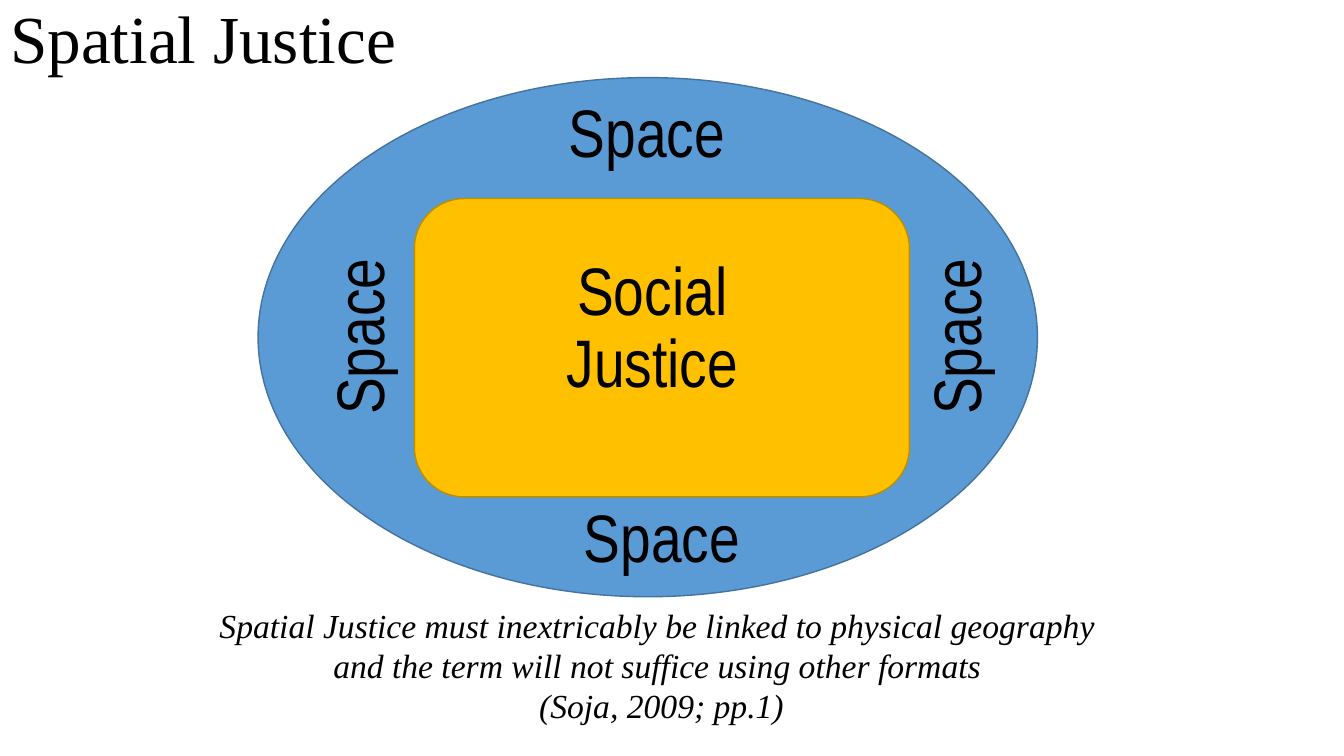
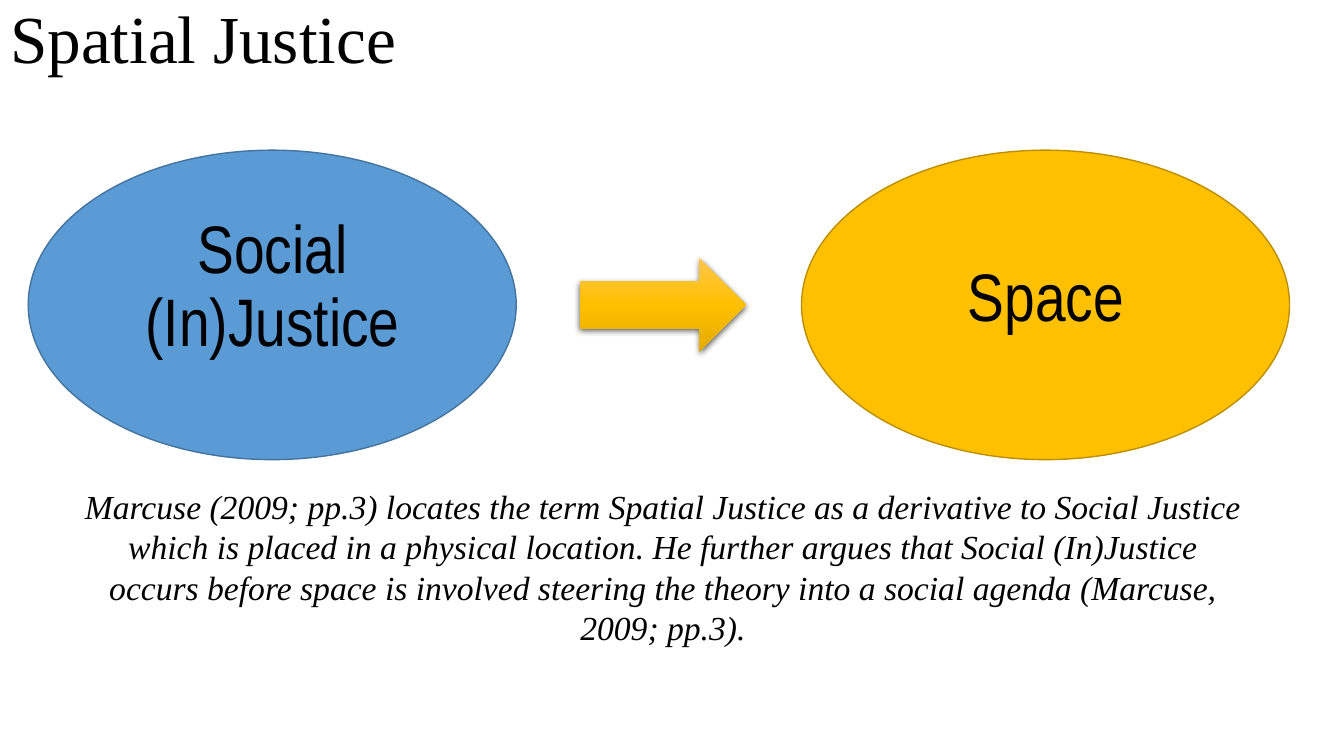
from lxml import etree
from pptx import Presentation
from pptx.dml.color import RGBColor
from pptx.enum.shapes import MSO_SHAPE
from pptx.enum.text import MSO_ANCHOR, MSO_AUTO_SIZE, PP_ALIGN
from pptx.oxml import parse_xml
from pptx.oxml.ns import nsdecls
from pptx.util import Inches, Pt

ELLIPSE, ROUNDED = MSO_SHAPE.OVAL, MSO_SHAPE.ROUNDED_RECTANGLE
ARROW = MSO_SHAPE.RIGHT_ARROW
LEFT, CENTER = PP_ALIGN.LEFT, PP_ALIGN.CENTER
TOP, NO_AUTOFIT = MSO_ANCHOR.TOP, MSO_AUTO_SIZE.NONE

BLACK = RGBColor(0x00, 0x00, 0x00)
BLUE, BLUE_EDGE = RGBColor(0x5B, 0x9B, 0xD5), RGBColor(0x43, 0x73, 0x9E)
GOLD, GOLD_EDGE = RGBColor(0xFF, 0xC0, 0x00), RGBColor(0xBD, 0x8E, 0x00)
GOLD_LIGHT, GOLD_DARK = RGBColor(0xFF, 0xC6, 0x4B), RGBColor(0xE3, 0xAB, 0x00)
SERIF, NARROW = "Times New Roman", "Arial Narrow"

# Content: shapes are (kind, box, fill, edge); labels are (lines, box, rotation)
TITLE = "Spatial Justice"
SLIDES = [
    {
        "shapes": [
            (ELLIPSE, (2.56, 0.77, 7.73, 5.15), BLUE, BLUE_EDGE),
            (ROUNDED, (4.11, 1.97, 4.91, 2.96), GOLD, GOLD_EDGE),
        ],
        "labels": [
            (["Social", "Justice"], (4.19, 2.5, 4.56, 1.68), 0),
            (["Space"], (5.34, 0.94, 2.15, 0.84), 0),
            (["Space"], (5.49, 4.96, 2.15, 0.84), 0),
            (["Space"], (2.53, 2.92, 2.15, 0.84), 270),
            (["Space"], (8.45, 2.92, 2.15, 0.84), 270),
        ],
        "arrow": None,
        "caption": [
            "Spatial Justice must inextricably be linked to physical geography ",
            "and the term will not suffice using other formats ",
            "(Soja, 2009; pp.1)",
        ],
        "caption_box": (2.04, 5.95, 9.04, 1.31),
        "caption_wrap": False,
    },
    {
        "shapes": [
            (ELLIPSE, (0.28, 1.49, 4.84, 3.07), BLUE, BLUE_EDGE),
            (ELLIPSE, (7.95, 1.49, 4.84, 3.07), GOLD, GOLD_EDGE),
        ],
        "labels": [
            (["Social", "(In)Justice"], (0.19, 2.09, 5.03, 1.85), 0),
            (["Space"], (9.19, 2.56, 2.37, 0.93), 0),
        ],
        "arrow": (5.75, 2.56, 1.65, 0.93),
        "caption": [
            "Marcuse (2009; pp.3) locates the term Spatial Justice as a derivative "
            "to Social Justice which is placed in a physical location. He further "
            "argues that Social (In)Justice occurs before space is involved steering "
            "the theory into a social agenda (Marcuse, 2009; pp.3).",
        ],
        "caption_box": (0.71, 4.77, 11.73, 1.72),
        "caption_wrap": True,
    },
]


def inches(box):
    return [Inches(length) for length in box]


def write(shape, lines, font, size, align=CENTER, spacing=0.9, italic=False, wrap=True):
    frame = shape.text_frame
    frame.text = "\n".join(lines)
    frame.word_wrap = wrap
    frame.auto_size = NO_AUTOFIT
    frame.vertical_anchor = TOP
    for para in frame.paragraphs:
        para.alignment = align
        para.line_spacing = spacing
        para.space_before = Pt(0)
        for span in para.runs:
            span.font.name, span.font.size = font, Pt(size)
            span.font.italic = italic
            span.font.color.rgb = BLACK


def add_title(slide):
    title = slide.shapes.title
    title.left, title.top, title.width, title.height = inches((0, 0, 10, 1.1))
    write(title, [TITLE], SERIF, 48, align=LEFT)


def add_filled(slide, kind, box, fill, edge):
    shape = slide.shapes.add_shape(kind, *inches(box))
    shape.shadow.inherit = False
    shape.fill.solid()
    shape.fill.fore_color.rgb = fill
    shape.line.color.rgb = edge
    shape.line.width = Pt(1)


def add_arrow(slide, box):
    arrow = slide.shapes.add_shape(ARROW, *inches(box))
    arrow.line.fill.background()
    arrow.shadow.inherit = False
    # Three-stop gradient, running downwards
    arrow.fill.gradient()
    stops = "".join(
        f'<a:gs pos="{percent * 1000}"><a:srgbClr val="{color}"/></a:gs>'
        for percent, color in [(0, GOLD_LIGHT), (50, GOLD), (100, GOLD_DARK)]
    )
    properties = arrow.element.spPr
    gradient = properties.find("{*}gradFill")
    properties.replace(gradient, parse_xml(
        f'<a:gradFill {nsdecls("a")} rotWithShape="1"><a:gsLst>{stops}</a:gsLst>'
        '<a:lin ang="5400000" scaled="0"/></a:gradFill>'
    ))
    # Soft shadow below
    effects = properties.find("{*}effectLst")
    shadow = etree.SubElement(
        effects, effects.tag.replace("effectLst", "outerShdw"),
        blurRad=str(Pt(4.5)), dist=str(Pt(1.5)), dir="5400000",
        algn="ctr", rotWithShape="0",
    )
    shadow.append(parse_xml(
        f'<a:srgbClr {nsdecls("a")} val="{BLACK}"><a:alpha val="63000"/></a:srgbClr>'
    ))


def build_slide(deck, content):
    slide = deck.slides.add_slide(deck.slide_layouts.get_by_name("Title Only"))
    add_title(slide)
    for kind, box, fill, edge in content["shapes"]:
        add_filled(slide, kind, box, fill, edge)
    for lines, box, rotation in content["labels"]:
        label = slide.shapes.add_textbox(*inches(box))
        label.rotation = rotation
        write(label, lines, NARROW, 48)
    if content["arrow"]:
        add_arrow(slide, content["arrow"])
    caption = slide.shapes.add_textbox(*inches(content["caption_box"]))
    write(caption, content["caption"], SERIF, 24, spacing=1.0, italic=True,
          wrap=content["caption_wrap"])


def main():
    deck = Presentation()
    deck.slide_width, deck.slide_height = Inches(13.33), Inches(7.5)
    for content in SLIDES:
        build_slide(deck, content)
    deck.save("out.pptx")


if __name__ == "__main__":
    main()
